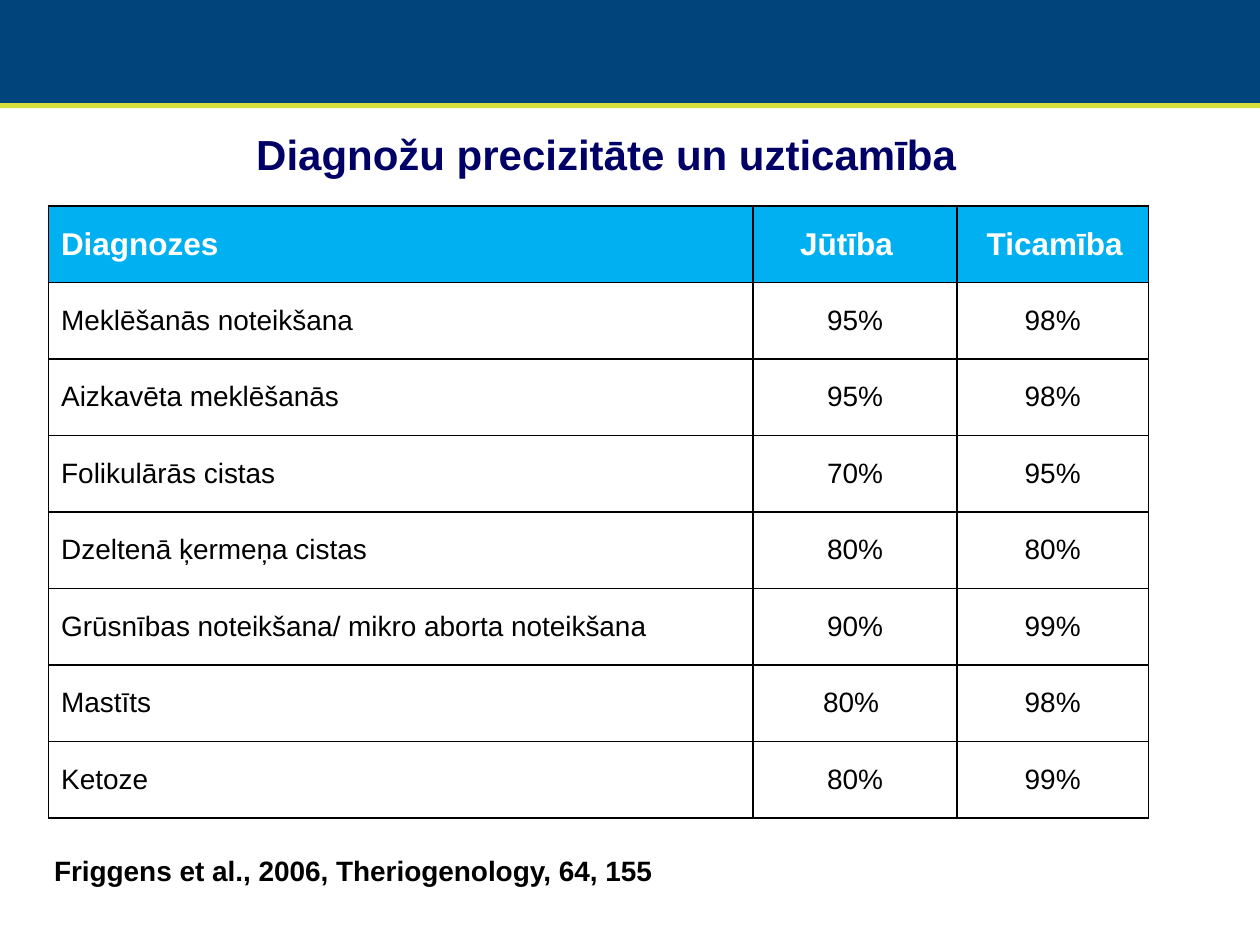
from lxml import etree
from pptx import Presentation
from pptx.dml.color import RGBColor
from pptx.enum.shapes import MSO_SHAPE
from pptx.enum.text import MSO_ANCHOR, PP_ALIGN
from pptx.oxml import parse_xml
from pptx.util import Cm, Pt

RECTANGLE = MSO_SHAPE.RECTANGLE
MIDDLE = MSO_ANCHOR.MIDDLE
LEFT, CENTER = PP_ALIGN.LEFT, PP_ALIGN.CENTER
DRAWING = "http://schemas.openxmlformats.org/drawingml/2006/main"


def write(frame, text, size=16, color="000000", bold=False, align=LEFT):
    para = frame.paragraphs[0]
    para.alignment = align
    span = para.add_run()
    span.text = text
    span.font.name = "Arial"
    span.font.size = Pt(size)
    span.font.bold = bold
    span.font.color.rgb = RGBColor.from_string(color)


def plain_table(page, place, rows, widths, border, bottom=1):
    """Add a table without banding or fill; bottom is the lower line width in points."""
    table = page.shapes.add_table(rows, len(widths), *map(Cm, place)).table
    table.first_row = table.horz_banding = False
    for column, width in zip(table.columns, widths):
        column.width = Cm(width)
    for cell in table.iter_cells():
        properties = cell._tc.get_or_add_tcPr()
        for side in "LRTB":
            points = bottom if side == "B" else 1
            properties.append(parse_xml(
                f'<a:ln{side} xmlns:a="{DRAWING}" w="{Pt(points)}"><a:solidFill>'
                f'<a:srgbClr val="{border}"/></a:solidFill></a:ln{side}>'))
        cell.fill.background()
    return table


deck = Presentation()
deck.slide_width, deck.slide_height = Cm(25.4), Cm(19.05)
page = deck.slides.add_slide(deck.slide_layouts[6])

# Banner with its accent line
banner = plain_table(page, (0, 0, 25.45, 2.16), 1, [25.45], "00447C").cell(0, 0)
banner.fill.solid()
banner.fill.fore_color.rgb = RGBColor.from_string("00447C")
accent = page.shapes.add_shape(RECTANGLE, 0, Cm(2.08), Cm(25.43), Cm(0.1))
accent.shadow.inherit = False
accent.fill.solid()
accent.fill.fore_color.rgb = RGBColor.from_string("D6E03D")
accent.line.fill.background()

# Diagnoses; header labels are shifted right by the cell margin
header = [("Diagnozes", 0.25), ("Jūtība", 0.95), ("Ticamība", 0.6)]
results = [
    ("Meklēšanās noteikšana", "95%", "98%"),
    ("Aizkavēta meklēšanās", "95%", "98%"),
    ("Folikulārās cistas", "70%", "95%"),
    ("Dzeltenā ķermeņa cistas", "80%", "80%"),
    ("Grūsnības noteikšana/ mikro aborta noteikšana", "90%", "99%"),
    ("Mastīts", "80% ", "98%"),
    ("Ketoze", "80%", "99%"),
]
diagnoses = plain_table(page, (0.98, 4.15, 22.17, 12.34), len(results) + 1,
                        [14.2, 4.11, 3.86], "000000")
for cell in diagnoses.iter_cells():
    cell.vertical_anchor = MIDDLE
for column, (label, margin) in enumerate(header):
    cell = diagnoses.cell(0, column)
    cell.margin_left = Cm(margin)
    cell.fill.solid()
    cell.fill.fore_color.rgb = RGBColor.from_string("00B0F0")
    write(cell.text_frame, label, size=18, color="FFFFFF", bold=True)
for row, values in enumerate(results, 1):
    for column, value in enumerate(values):
        write(diagnoses.cell(row, column).text_frame, value,
              align=CENTER if column else LEFT)

title = plain_table(page, (4.5, 2.54, 15.44, 1.27), 1, [15.44], "FFFFFF", bottom=3)
write(title.cell(0, 0).text_frame, "Diagnožu precizitāte un uzticamība",
      size=24, color="000066", bold=True, align=CENTER)

citation = page.shapes.add_textbox(Cm(0.84), Cm(17.09), Cm(12.73), Cm(1.8))
citation.text_frame.word_wrap = True
write(citation.text_frame, "Friggens et al., 2006, Theriogenology, 64, 155", bold=True)

deck.save("out.pptx")
